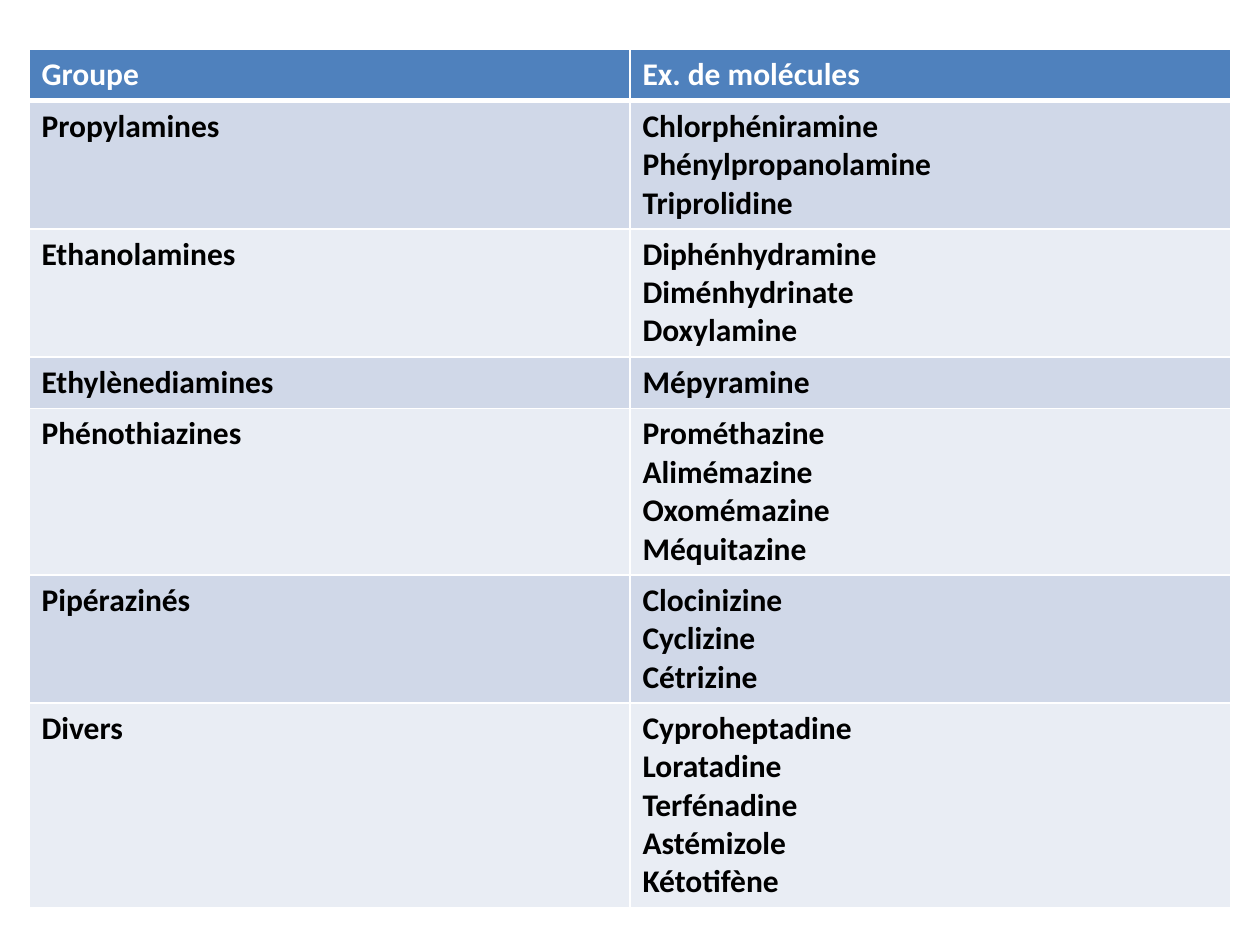
from lxml import etree
from pptx import Presentation
from pptx.dml.color import RGBColor
from pptx.oxml.ns import qn
from pptx.util import Inches, Pt

HEADINGS = ("Groupe", "Ex. de molécules")
GROUPS = [
    ("Propylamines", ["Chlorphéniramine", "Phénylpropanolamine", "Triprolidine"]),
    ("Ethanolamines", ["Diphénhydramine", "Diménhydrinate", "Doxylamine"]),
    ("Ethylènediamines", ["Mépyramine"]),
    ("Phénothiazines", ["Prométhazine", "Alimémazine", "Oxomémazine", "Méquitazine"]),
    ("Pipérazinés", ["Clocinizine", "Cyclizine", "Cétrizine"]),
    ("Divers", ["Cyproheptadine", "Loratadine", "Terfénadine", "Astémizole", "Kétotifène"]),
]

WHITE = RGBColor(0xFF, 0xFF, 0xFF)
BLACK = RGBColor(0, 0, 0)
BLUE = RGBColor(0x4F, 0x81, 0xBD)
BANDS = (RGBColor(0xD0, 0xD8, 0xE8), RGBColor(0xE9, 0xED, 0xF4))

FONT = "Calibri"
LEFT, TOP = 0.23, 0.39
COLUMN_WIDTH = 4.77
LINE_HEIGHT, ROW_PADDING = 0.3, 0.11


def add_borders(cell, bottom_width):
    properties = cell._tc.get_or_add_tcPr()
    widths = {"a:lnL": 1, "a:lnR": 1, "a:lnT": 1, "a:lnB": bottom_width}
    for side, width in widths.items():
        line = etree.SubElement(properties, qn(side), w=str(Pt(width)))
        fill = etree.SubElement(line, qn("a:solidFill"))
        etree.SubElement(fill, qn("a:srgbClr"), val=str(WHITE))


def fill_cell(cell, lines, fill_color, text_color, bottom_width):
    add_borders(cell, bottom_width)
    cell.fill.solid()
    cell.fill.fore_color.rgb = fill_color
    frame = cell.text_frame
    for index, line in enumerate(lines):
        paragraph = frame.add_paragraph() if index else frame.paragraphs[0]
        run = paragraph.add_run()
        run.text = line
        run.font.name = FONT
        run.font.size = Pt(18)
        run.font.bold = True
        run.font.color.rgb = text_color


def main():
    presentation = Presentation()
    presentation.slide_width = Inches(10)
    presentation.slide_height = Inches(7.5)
    slide = presentation.slides.add_slide(presentation.slide_layouts[6])

    rows = [([HEADINGS[0]], [HEADINGS[1]])]
    rows += [([group], molecules) for group, molecules in GROUPS]
    heights = [ROW_PADDING + LINE_HEIGHT * len(lines) for _, lines in rows]
    table = slide.shapes.add_table(
        len(rows), len(HEADINGS), Inches(LEFT), Inches(TOP),
        Inches(COLUMN_WIDTH * len(HEADINGS)), Inches(sum(heights)),
    ).table
    for column in table.columns:
        column.width = Inches(COLUMN_WIDTH)

    for index, (contents, height) in enumerate(zip(rows, heights)):
        table.rows[index].height = Inches(height)
        if index == 0:
            style = (BLUE, WHITE, 3)
        else:
            style = (BANDS[(index - 1) % 2], BLACK, 1)
        for column, lines in enumerate(contents):
            fill_cell(table.cell(index, column), lines, *style)

    presentation.save("out.pptx")


if __name__ == "__main__":
    main()
